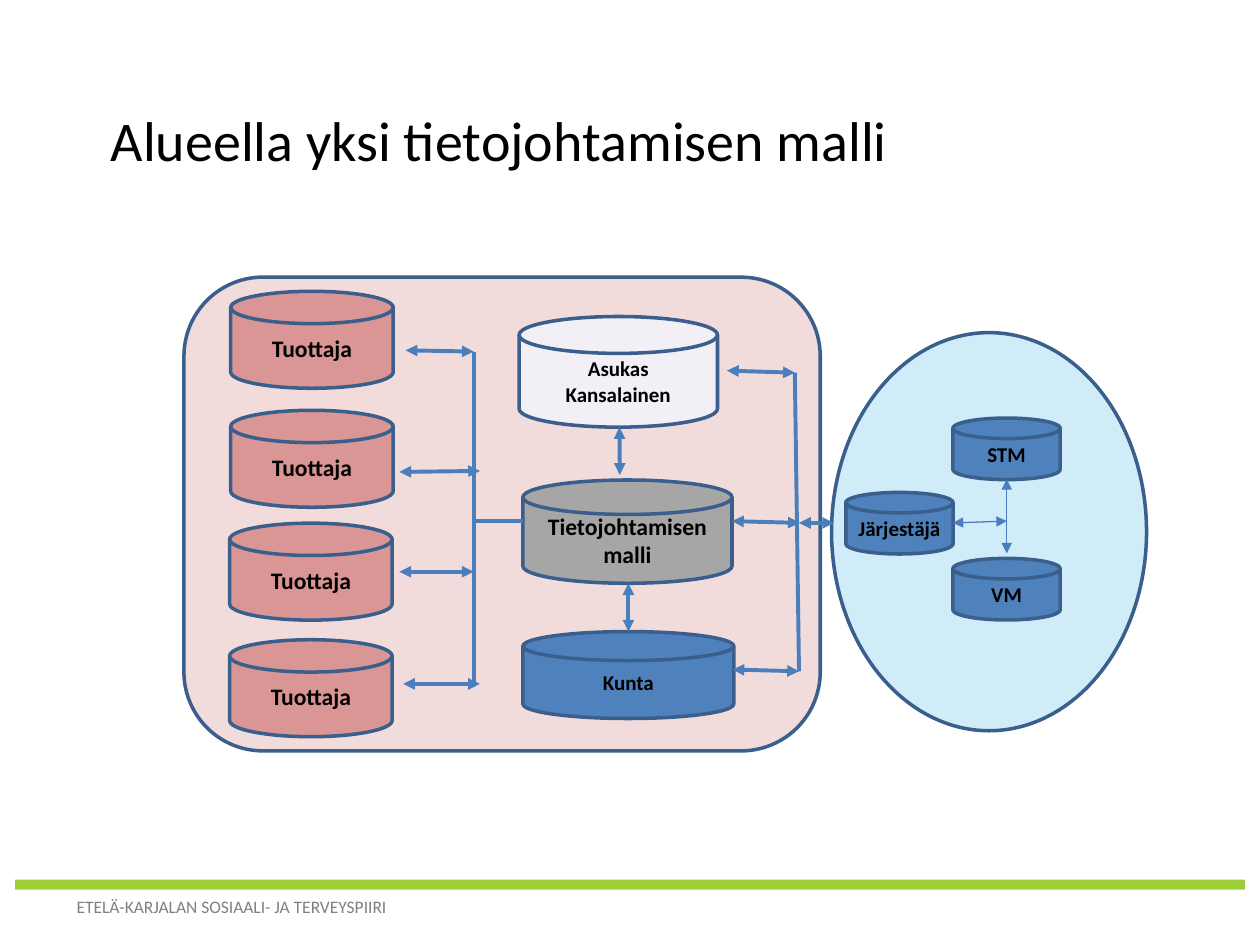
from lxml import etree
from pptx import Presentation
from pptx.dml.color import RGBColor
from pptx.enum.shapes import MSO_CONNECTOR, MSO_SHAPE
from pptx.enum.text import MSO_ANCHOR, PP_ALIGN
from pptx.oxml.ns import qn
from pptx.util import Pt

CYLINDER = MSO_SHAPE.FLOWCHART_MAGNETIC_DISK
ROUNDED, OVAL, RECTANGLE = MSO_SHAPE.ROUNDED_RECTANGLE, MSO_SHAPE.OVAL, MSO_SHAPE.RECTANGLE
STRAIGHT = MSO_CONNECTOR.STRAIGHT
MIDDLE, TOP = MSO_ANCHOR.MIDDLE, MSO_ANCHOR.TOP
CENTER, LEFT = PP_ALIGN.CENTER, PP_ALIGN.LEFT

THEME = {
    "font": "Calibri",
    "text": "000000", "footer": "808080", "bar": "9FCD37",
    "region": "F2DCDB", "state": "089DE0",
    "producer": "D99694", "model": "A6A6A6", "authority": "4F81BD", "resident": "F2F0F6",
    "outline": "3A5F8C", "arrow": "4B7EBC",
    "title_size": 32, "large_size": 13.5, "label_size": 12, "footer_size": 10,
    "outline_width": 2, "thick": 2.25, "thin": 0.75,
}

TITLE = ("Alueella yksi tietojohtamisen malli", (56.2, 45.4, 486, 67.7))
FOOTER = ("ETELÄ-KARJALAN SOSIAALI- JA TERVEYSPIIRI", (36.7, 508.3, 194.4, 19.4))
BAR = (8.6, 502.6, 702.8, 5.8)
REGION = (105.1, 158.4, 363.6, 270.7)
STATE = (475.2, 190.1, 180, 227.5)
STATE_OPACITY = 19

PRODUCER_LABEL, PRODUCER_SIZE = "Tuottaja", (92.9, 55.4)
PRODUCERS = [
    (131.8, 166.5, (231.8, 200.2), (270.7, 200.9)),
    (131.8, 234.5, (228.2, 269.7), (274.3, 269.1)),
    (131.2, 299, (228.2, 326.7), (270.7, 326.7)),
    (131.2, 365.6, (230.4, 390.8), (274.3, 390.8)),
]
CORE = [
    ("Asukas\nKansalainen", (296.6, 180.9, 113.4, 63.2), "resident", "label_size"),
    ("Tietojohtamisen\nmalli", (298.8, 274.3, 119.5, 59), "model", "large_size"),
    ("Kunta", (298.8, 360.9, 120.5, 49.7), "authority", "label_size"),
]
OFFICE_SIZE = (61.3, 35.2)
OFFICES = [("Järjestäjä", 483.3, 281.4), ("STM", 544.5, 238.9), ("VM", 544.5, 319.1)]

TRUNKS = [
    ((270.9, 200.9), (270.9, 390.8)),
    ((270.9, 297.8), (298.8, 297.8)),
    ((454.2, 213), (456.6, 383.6)),
]
CORE_ARROWS = [
    ((354.2, 271.4), (354, 244.1)),
    ((359.1, 360.9), (359.1, 333.3)),
    ((415.4, 211.8), (454.2, 213)),
    ((418.3, 297.8), (457, 298.8)),
    ((418.6, 382.6), (456.6, 383.6)),
    ((456.6, 298.8), (476.6, 298.8)),
]
OFFICE_ARROWS = [
    ((575.3, 273.8), (575.3, 316.2)),
    ((575.3, 297.8), (544.5, 298.8)),
]


def color(name):
    return RGBColor.from_string(THEME[name])


def write(shape, text, size, ink="text", align=CENTER, anchor=MIDDLE, bold=True):
    frame = shape.text_frame
    frame.text = text
    frame.vertical_anchor = anchor
    for paragraph in frame.paragraphs:
        paragraph.alignment = align
        font = paragraph.font
        font.name, font.size, font.bold = THEME["font"], Pt(THEME[size]), bold
        font.color.rgb = color(ink)


def add_text(slide, content, size, ink, anchor, wrap):
    text, box = content
    shape = slide.shapes.add_textbox(*map(Pt, box))
    shape.text_frame.word_wrap = wrap
    write(shape, text, size, ink, LEFT, anchor, False)


def add_shape(slide, kind, box, fill, outlined=True):
    shape = slide.shapes.add_shape(kind, *map(Pt, box))
    shape.shadow.inherit = False
    shape.fill.solid()
    shape.fill.fore_color.rgb = color(fill)
    if outlined:
        shape.line.color.rgb = color("outline")
        shape.line.width = Pt(THEME["outline_width"])
    else:
        shape.line.fill.background()
    return shape


def add_cylinder(slide, text, box, fill, size):
    shape = add_shape(slide, CYLINDER, box, fill)
    frame = shape.text_frame
    frame.margin_left = frame.margin_right = frame.margin_top = frame.margin_bottom = 0
    frame.word_wrap = True
    write(shape, text, size)


def add_line(slide, start, end, width="thick", arrows=True):
    connector = slide.shapes.add_connector(STRAIGHT, *map(Pt, start + end))
    connector.line.color.rgb = color("arrow")
    connector.line.width = Pt(THEME[width])
    properties = connector._element.spPr
    if arrows:
        line = properties.find(qn("a:ln"))
        for tag in ("a:headEnd", "a:tailEnd"):
            etree.SubElement(line, qn(tag), type="triangle")
    etree.SubElement(properties, qn("a:effectLst"))


def main():
    presentation = Presentation()
    presentation.slide_width, presentation.slide_height = Pt(720), Pt(540)
    slide = presentation.slides.add_slide(presentation.slide_layouts[6])

    add_shape(slide, RECTANGLE, BAR, "bar", outlined=False)
    add_text(slide, FOOTER, "footer_size", "footer", TOP, False)
    add_shape(slide, ROUNDED, REGION, "region")
    state = add_shape(slide, OVAL, STATE, "state")
    tint = state._element.spPr.find(qn("a:solidFill"))[0]
    etree.SubElement(tint, qn("a:alpha"), val=str(STATE_OPACITY * 1000))
    add_text(slide, TITLE, "title_size", "text", MIDDLE, True)

    for left, top, start, end in PRODUCERS:
        add_cylinder(slide, PRODUCER_LABEL, (left, top) + PRODUCER_SIZE, "producer", "large_size")
        add_line(slide, start, end)
    for text, box, fill, size in CORE:
        add_cylinder(slide, text, box, fill, size)
    for text, left, top in OFFICES:
        add_cylinder(slide, text, (left, top) + OFFICE_SIZE, "authority", "label_size")

    for start, end in TRUNKS:
        add_line(slide, start, end, arrows=False)
    for start, end in CORE_ARROWS:
        add_line(slide, start, end)
    for start, end in OFFICE_ARROWS:
        add_line(slide, start, end, "thin")

    presentation.save("out.pptx")


if __name__ == "__main__":
    main()
